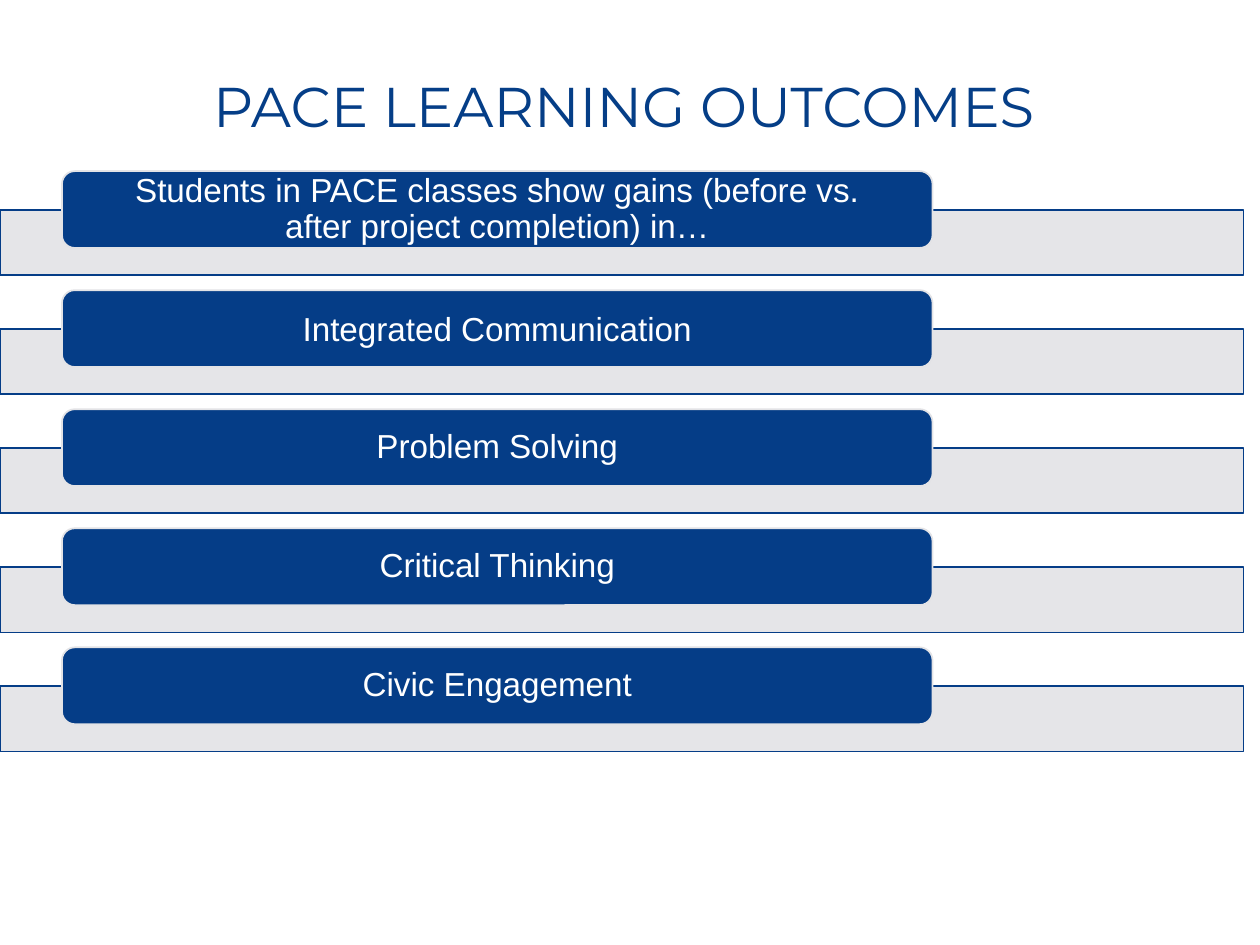
import pptx
import pptx.util
import pptx.dml.color
import pptx.enum.shapes
import pptx.enum.text
import lxml.etree
from dataclasses import dataclass

Cm = pptx.util.Cm
Pt = pptx.util.Pt
Kind = pptx.enum.shapes.MSO_SHAPE
Mid = pptx.enum.text.MSO_ANCHOR.MIDDLE
Top = pptx.enum.text.MSO_ANCHOR.TOP

title = "PACE LEARNING OUTCOMES"
rows = [
    ("Students in PACE classes show gains (before vs. after project completion) in…", 0.9),
    ("Integrated Communication", None),
    ("Problem Solving", 0.9),
    ("Critical Thinking", 0.9),
    ("Civic Engagement", 0.9),
]


@dataclass
class Theme:
    navy: str = "053D87"
    head: str = "053E87"
    gray: str = "E3E3E6"
    white: str = "FFFFFF"
    sans: str = "Arial"
    face: str = "Montserrat"
    big: int = 32
    body: int = 19


look = Theme()


def rgb(code):
    return pptx.dml.color.RGBColor.from_string(code)


def box(slide, kind, area, fill, line):
    shape = slide.shapes.add_shape(kind, *map(Cm, area))
    shape.shadow.inherit = False
    shape.fill.solid()
    shape.fill.fore_color.rgb = rgb(fill)
    shape.line.color.rgb = rgb(line)
    shape.line.width = Pt(1)
    return shape


def fade(shape, share):
    tag = pptx.oxml.ns.qn("a:alpha")
    color = shape.fill._xPr.find(".//" + pptx.oxml.ns.qn("a:srgbClr"))
    lxml.etree.SubElement(color, tag).set("val", str(share * 1000))


def write(shape, text, face, size, color, gap, side, edge, anchor):
    frame = shape.text_frame
    frame.text = text
    frame.word_wrap = True
    frame.vertical_anchor = anchor
    frame.margin_left = frame.margin_right = Cm(side)
    frame.margin_top = frame.margin_bottom = Cm(edge)
    para = frame.paragraphs[0]
    para.alignment = pptx.enum.text.PP_ALIGN.CENTER
    if gap:
        para.line_spacing = gap
    font = para.runs[0].font
    font.name = face
    font.size = Pt(size)
    font.color.rgb = rgb(color)


def main():
    deck = pptx.Presentation()
    deck.slide_width, deck.slide_height = Cm(25.4), Cm(19.05)
    slide = deck.slides.add_slide(deck.slide_layouts[6])

    start, pitch, drop = 3.45, 2.4, 0.78
    for i, (text, gap) in enumerate(rows):
        y = start + i * pitch
        bar = box(slide, Kind.RECTANGLE, (0, y + drop, 25.07, 1.32), look.gray, look.navy)
        fade(bar, 90)
        pill = box(slide, Kind.ROUNDED_RECTANGLE, (1.25, y, 17.55, 1.55), look.navy, look.gray)
        write(pill, text, look.sans, look.body, look.white, gap, 0.66, 0, Mid)

    head = slide.shapes.add_textbox(Cm(1.52), Cm(1.47), Cm(22.12), Cm(3.02))
    write(head, title, look.face, look.big, look.head, 0.9, 0.25, 0.13, Top)
    deck.save("out.pptx")


if __name__ == "__main__":
    main()
